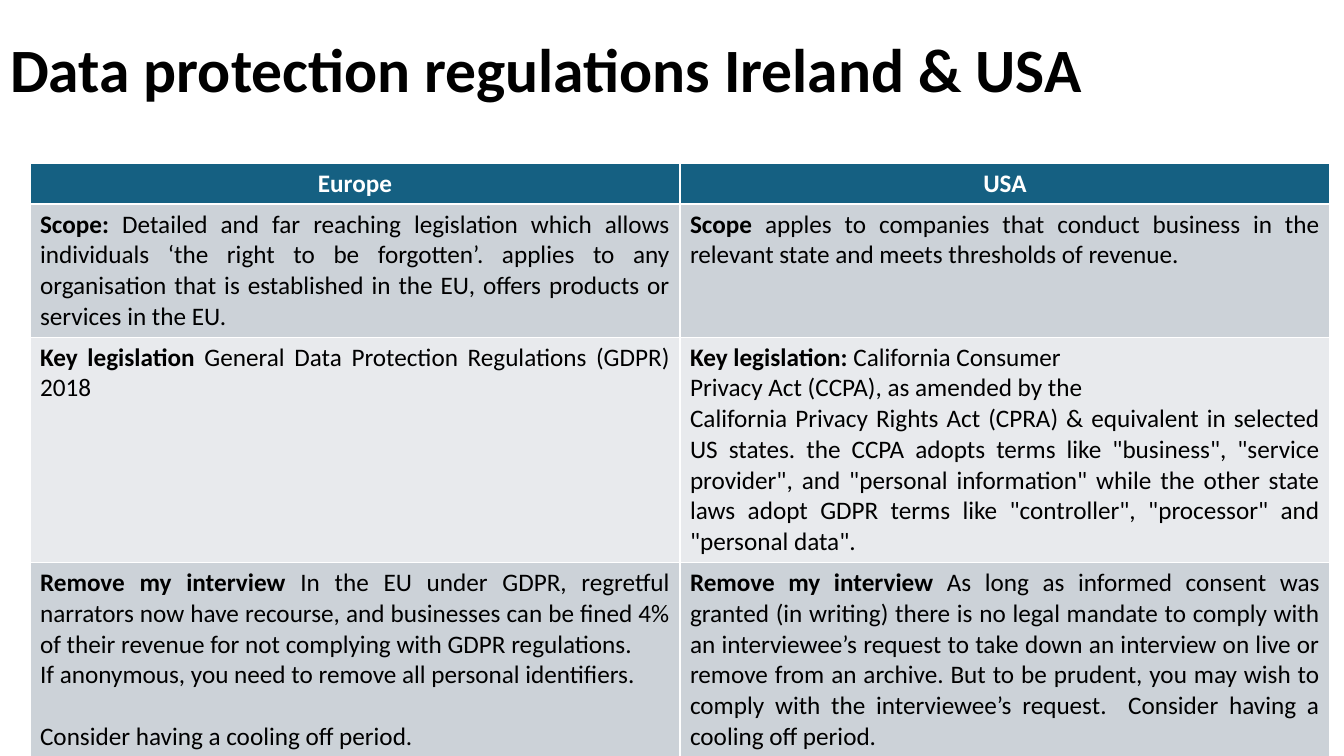
from pptx import Presentation
from pptx.dml.color import RGBColor
from pptx.enum.text import MSO_ANCHOR, MSO_AUTO_SIZE, PP_ALIGN
from pptx.util import Emu, Pt

LEFT, CENTER, JUSTIFY = PP_ALIGN.LEFT, PP_ALIGN.CENTER, PP_ALIGN.JUSTIFY
MIDDLE = MSO_ANCHOR.MIDDLE
NO_FIT = MSO_AUTO_SIZE.NONE
EMU_PER_PX = 914400 / 100.8
FONT = "Calibri"
BLACK, WHITE = "000000", "FFFFFF"
HEADER_FILL, BAND_FILLS = "156082", ("CCD2D8", "E8EAED")


def px(length):
    return Emu(round(length * EMU_PER_PX))


def write(paragraph, text, lead="", size=18, color=BLACK, bold=False, align=JUSTIFY):
    """Write a paragraph, with an optional bold lead-in before the text."""
    paragraph.alignment = align
    for words, weight in ((lead, True), (text, bold)):
        if words:
            run = paragraph.add_run()
            run.text = words
            run.font.name = FONT
            run.font.size = Pt(size)
            run.font.bold = weight
            run.font.color.rgb = RGBColor.from_string(color)


presentation = Presentation()
presentation.slide_width, presentation.slide_height = px(1344), px(756)
slide = presentation.slides.add_slide(presentation.slide_layouts[5])

# Title
title = slide.shapes.title
title.left, title.top, title.width, title.height = px(0), px(0), px(1159), px(146)
title.text_frame.auto_size = NO_FIT
title.text_frame.vertical_anchor = MIDDLE
heading = title.text_frame.paragraphs[0]
heading.line_spacing = 0.9
write(heading, "Data protection regulations Ireland & USA", size=44, bold=True, align=LEFT)

# Table content: each cell is a bold lead-in and its paragraphs
headers = ("Europe", "USA")
topics = [
    (
        ("Scope: ", [
            "Detailed and far reaching legislation which allows individuals ‘the right to be "
            "forgotten’. applies to any organisation that is established in the EU, offers "
            "products or services in the EU."]),
        ("Scope ", [
            "apples to companies that conduct business in the relevant state and meets "
            "thresholds of revenue."]),
    ),
    (
        ("Key legislation ", ["General Data Protection Regulations (GDPR) 2018"]),
        ("Key legislation: ", [
            "California Consumer",
            "Privacy Act (CCPA), as amended by the",
            "California Privacy Rights Act (CPRA) & equivalent in selected US states. the CCPA "
            "adopts terms like \"business\", \"service provider\", and \"personal information\" "
            "while the other state laws adopt GDPR terms like \"controller\", \"processor\" and "
            "\"personal data\"."]),
    ),
    (
        ("Remove my interview ", [
            "In the EU under GDPR, regretful narrators now have recourse, and businesses can be "
            "fined 4% of their revenue for not complying with GDPR regulations.",
            "If anonymous, you need to remove all personal identifiers.",
            "Consider having a cooling off period."]),
        ("Remove my interview ", [
            "As long as informed consent was granted (in writing) there is no legal mandate to "
            "comply with an interviewee’s request to take down an interview on live or remove "
            "from an archive. But to be prudent, you may wish to comply with the interviewee’s "
            "request.  Consider having a cooling off period."]),
    ),
    (("", []), ("", [])),
]

# Table grid
row_heights = (41, 133, 225, 194, 41)
table = slide.shapes.add_table(
    len(row_heights), len(headers), px(30), px(163), px(1300), px(sum(row_heights))).table
for row, height in zip(table.rows, row_heights):
    row.height = px(height)

# Header row
for column, header in enumerate(headers):
    cell = table.cell(0, column)
    cell.fill.solid()
    cell.fill.fore_color.rgb = RGBColor.from_string(HEADER_FILL)
    write(cell.text_frame.paragraphs[0], header, color=WHITE, bold=True, align=CENTER)

# Topic rows
for row_index, topic in enumerate(topics):
    for column, (lead, texts) in enumerate(topic):
        cell = table.cell(row_index + 1, column)
        cell.fill.solid()
        cell.fill.fore_color.rgb = RGBColor.from_string(BAND_FILLS[row_index % 2])
        frame = cell.text_frame
        for index, text in enumerate(texts):
            paragraph = frame.add_paragraph() if index else frame.paragraphs[0]
            write(paragraph, text, lead="" if index else lead)

# One line of space above the closing advice for Europe
table.cell(3, 0).text_frame.paragraphs[-1].space_before = Pt(22)

presentation.save("out.pptx")
